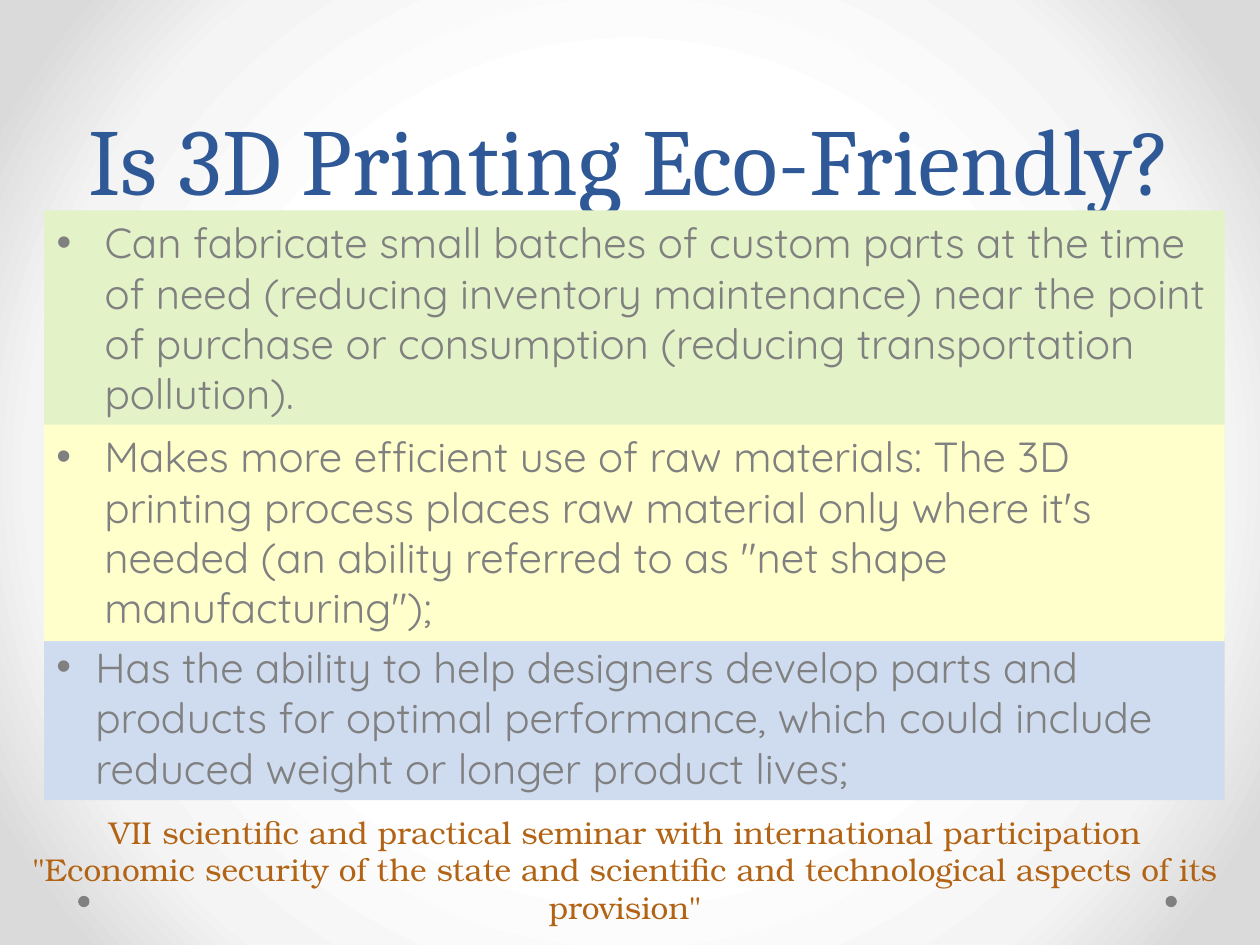
from lxml import etree
from pptx import Presentation
from pptx.dml.color import RGBColor
from pptx.enum.shapes import MSO_SHAPE
from pptx.enum.text import MSO_ANCHOR, MSO_AUTO_SIZE, PP_ALIGN
from pptx.oxml import parse_xml
from pptx.oxml.ns import nsdecls, qn
from pptx.util import Inches, Pt

RECTANGLE, OVAL = MSO_SHAPE.RECTANGLE, MSO_SHAPE.OVAL
LEFT, CENTER = PP_ALIGN.LEFT, PP_ALIGN.CENTER
TOP, BOTTOM = MSO_ANCHOR.TOP, MSO_ANCHOR.BOTTOM
NO_FIT = MSO_AUTO_SIZE.NONE

COLORS = {
    "title": "2F5897", "text": "808080", "seminar": "B26314", "dot": "808080",
    "green": "E3F2C7", "yellow": "FFFFCC", "blue": "CFDCF0",
}

deck = Presentation()
deck.slide_width, deck.slide_height = Inches(10), Inches(7.5)
slide = deck.slides.add_slide(deck.slide_layouts[1])


def share(left, top, width, height):
    """Turn percentages of the slide's width and height into lengths."""
    return [int(size * part / 100) for size, part in zip(
        (deck.slide_width, deck.slide_height) * 2, (left, top, width, height))]


def write(shape, lines, font, size, color, align=LEFT, anchor=TOP,
          spacing=None, hang=None, before=0):
    frame = shape.text_frame
    frame.word_wrap, frame.auto_size = True, NO_FIT
    frame.vertical_anchor = anchor
    frame.text = "\n".join(lines)
    for paragraph in frame.paragraphs:
        paragraph.alignment = align
        if spacing:
            paragraph.line_spacing = Pt(spacing)
        for run in paragraph.runs:
            run.font.name, run.font.size = font, Pt(size)
            run.font.color.rgb = RGBColor.from_string(COLORS[color])
        if hang:
            properties = paragraph._p.get_or_add_pPr()
            properties.set("marL", str(Inches(hang)))
            properties.set("indent", str(-Inches(hang)))
            space = etree.SubElement(properties, qn("a:spcBef"))
            etree.SubElement(space, qn("a:spcPct")).set("val", str(before * 1000))
            etree.SubElement(properties, qn("a:buFont")).set("typeface", "Arial")
            etree.SubElement(properties, qn("a:buChar")).set("char", "•")


# Background: radial gradient from the centre
background = slide.background.fill
background.solid()
stops = "".join(
    f'<a:gs pos="{position * 1000}"><a:srgbClr val="{color}"/></a:gs>'
    for position, color in ((50, "FFFFFF"), (76, "F4F4F4"), (92, "DADADA")))
gradient = parse_xml(
    f'<a:gradFill {nsdecls("a")} rotWithShape="1"><a:gsLst>{stops}</a:gsLst>'
    '<a:path path="circle"><a:fillToRect l="50000" t="50000" r="50000" b="50000"/>'
    '</a:path></a:gradFill>')
solid = slide.background._cSld.find(".//" + qn("a:solidFill"))
solid.getparent().replace(solid, gradient)

# Corner dots
for dot_left in (92.5, 6.2):
    dot = slide.shapes.add_shape(OVAL, *share(dot_left, 94.8, 0.9, 1.2))
    dot.shadow.inherit = False
    dot.fill.solid()
    dot.fill.fore_color.rgb = RGBColor.from_string(COLORS["dot"])
    dot.line.fill.background()

# Title, brought in front of the dots but behind the benefits
title, first_benefit = slide.shapes.title, slide.placeholders[1]
for placeholder in (title, first_benefit):
    slide.shapes._spTree.append(placeholder._element)
title.left, title.top, title.width, title.height = share(5, 0, 90, 23.33)
write(title, ["Is 3D Printing Eco-Friendly?"], "Cambria", 54, "title",
      align=CENTER, anchor=BOTTOM, spacing=58)

# Benefits: colour, top, height, hanging indent, space before, wording
benefits = [
    ("green", 22.27, 28.8, 0.38, 20,
     "Can fabricate small batches of custom parts at the time of need (reducing "
     "inventory maintenance) near the point of purchase or consumption (reducing "
     "transportation pollution)."),
    ("blue", 67.2, 17.47, 0.31, 0,
     "Has the ability to help designers develop parts and products for optimal "
     "performance, which could include reduced weight or longer product lives;"),
    ("yellow", 44.93, 22.93, 0.38, 20,
     "Makes more efficient use of raw materials: The 3D printing process places raw "
     "material only where it's needed (an ability referred to as \"net shape "
     "manufacturing\");"),
]
for color, top, height, hang, before, wording in benefits:
    area = share(3.5, top, 93.7, height)
    if color == "green":
        benefit = first_benefit
        benefit.left, benefit.top, benefit.width, benefit.height = area
    else:
        benefit = slide.shapes.add_shape(RECTANGLE, *area)
        benefit.shadow.inherit = False
    benefit.fill.solid()
    benefit.fill.fore_color.rgb = RGBColor.from_string(COLORS[color])
    benefit.line.fill.background()
    write(benefit, [wording], "Quicksand", 24, "text", hang=hang, before=before)

# Seminar name
seminar = slide.shapes.add_textbox(*share(-0.4, 85.33, 100, 13.47))
write(seminar, [
    "VІI scientific and practical seminar with international participation",
    "\"Economic security of the state and scientific and technological aspects of its "
    "provision\"",
], "TeX Gyre Bonum", 18, "seminar", align=CENTER)

deck.save("out.pptx")
